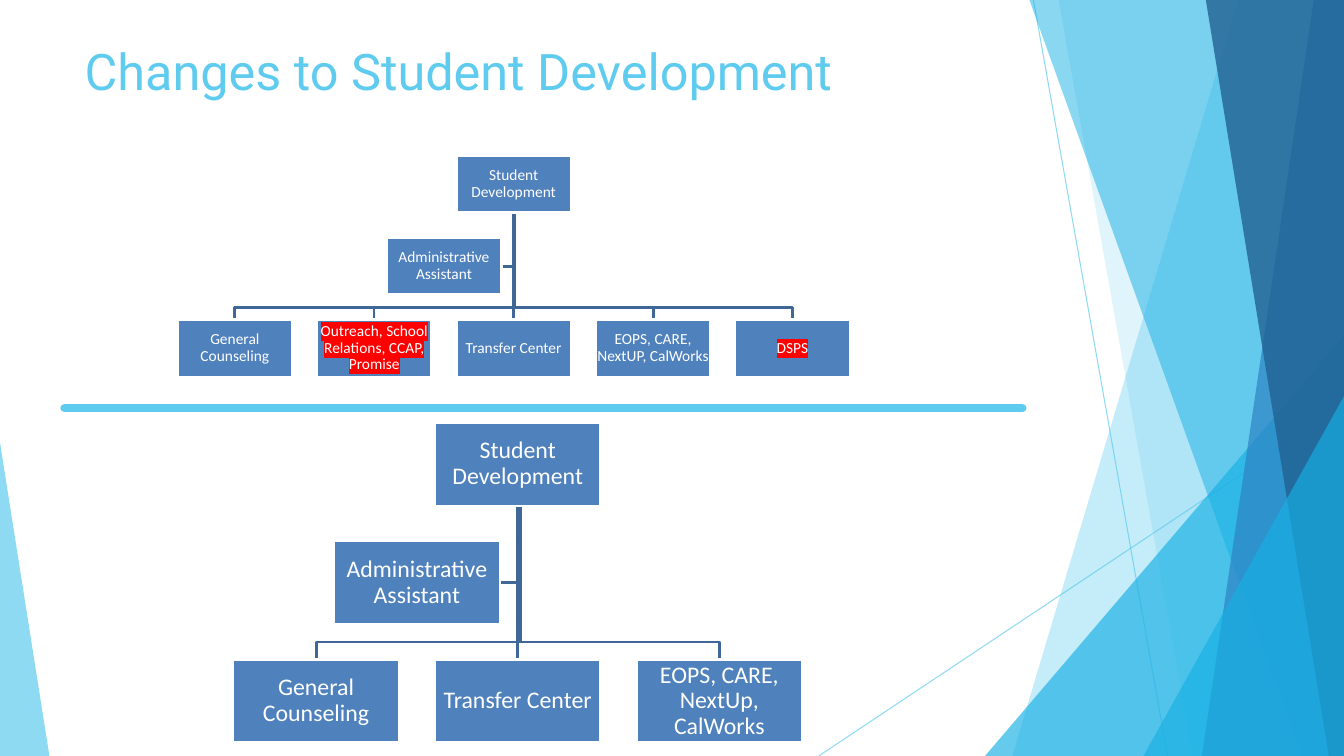
from lxml.etree import SubElement
from pptx import Presentation
from pptx.dml.color import RGBColor
from pptx.enum.shapes import MSO_CONNECTOR, MSO_SHAPE
from pptx.enum.text import MSO_ANCHOR, MSO_AUTO_SIZE, PP_ALIGN
from pptx.oxml.ns import qn
from pptx.util import Pt

PX = 9144
WIDTH, HEIGHT = 1333, 750
SKY, AZURE, BLUE, NAVY = "5FCBEF", "17B0E4", "2E83C3", "226292"
BOX_FILL, BRANCH, WHITE, RED = "4F81BD", "3F6797", "FFFFFF", "FF0000"


def px(*lengths):
    """Turn px lengths into EMU."""
    return [round(length * PX) for length in lengths]


def paint(color_format, color, opacity=100):
    """Set a hex colour and its opacity on a fill or line that is made solid."""
    color_format.solid()
    color_format.fore_color.rgb = RGBColor.from_string(color)
    if opacity < 100:
        tint = color_format._xPr.find(qn("a:solidFill"))[0]
        SubElement(tint, qn("a:alpha"), val=str(opacity * 1000))


def write(frame, text, *, size, font, color, align=PP_ALIGN.LEFT,
          anchor=MSO_ANCHOR.TOP, inset=None, spacing=None, highlight=None):
    """Put formatted text in a text frame."""
    frame.word_wrap = True
    frame.auto_size = MSO_AUTO_SIZE.NONE
    frame.vertical_anchor = anchor
    if inset is not None:
        (frame.margin_left, frame.margin_top,
         frame.margin_right, frame.margin_bottom) = px(*[inset] * 4)
    paragraph = frame.paragraphs[0]
    paragraph.alignment = align
    paragraph.line_spacing = spacing
    run = paragraph.add_run()
    run.text = text
    run.font.size = Pt(size)
    run.font.bold = False
    paint(run.font.fill, color)
    if highlight:
        mark = SubElement(run.font._element, qn("a:highlight"))
        SubElement(mark, qn("a:srgbClr"), val=highlight)
    run.font.name = font


def draw_line(shapes, start, end, color, weight, opacity=100, cap="flat"):
    """Draw a straight line between two points."""
    line = shapes.add_connector(MSO_CONNECTOR.STRAIGHT, *px(*start, *end))
    line.line.width = Pt(weight)
    paint(line.line.fill, color, opacity)
    properties = line.element.spPr
    properties.find(qn("a:ln")).set("cap", cap)
    SubElement(properties, qn("a:effectLst"))


def draw_outline(shapes, points, close):
    """Draw a freeform through the points."""
    builder = shapes.build_freeform(*points[0], scale=PX)
    builder.add_line_segments(points[1:], close=close)
    outline = builder.convert_to_shape()
    outline.shadow.inherit = False
    return outline


def draw_facet(shapes, top, bottom, color, opacity):
    """Fill the slide from a slanted edge to its right side."""
    corners = [(top, 0), (WIDTH, 0), (WIDTH, HEIGHT), (bottom, HEIGHT)]
    facet = draw_outline(shapes, corners, True)
    paint(facet.fill, color, opacity)
    facet.line.fill.background()


def draw_wedge(shapes, left, top, width, apex, color, opacity):
    """Stand a right triangle on the bottom edge of the slide."""
    wedge = shapes.add_shape(MSO_SHAPE.ISOSCELES_TRIANGLE,
                             *px(left, top, width, HEIGHT - top))
    wedge.adjustments[0] = apex
    wedge.shadow.inherit = False
    paint(wedge.fill, color, opacity)
    wedge.line.fill.background()


def draw_backdrop(shapes):
    """Draw the translucent facets at both sides of the slide."""
    draw_line(shapes, (1025, 0), (1158, HEIGHT), SKY, 0.75, 70)
    draw_line(shapes, (WIDTH, 403), (812, HEIGHT), SKY, 0.75, 70)
    draw_facet(shapes, 1228, 1004, SKY, 36)
    draw_facet(shapes, 1050, 1183, SKY, 20)
    draw_wedge(shapes, 977, 333, 356, 1, AZURE, 66)
    draw_facet(shapes, 1021, 1291, AZURE, 50)
    draw_facet(shapes, 1303, 1192, BLUE, 70)
    draw_facet(shapes, 1196, 1318, NAVY, 80)
    draw_wedge(shapes, 1134, 393, 199, 1, AZURE, 66)
    draw_wedge(shapes, 0, 439, 49, 0, SKY, 70)


def draw_unit(shapes, left, top, width, height, label, size, highlight=None):
    """Draw one labelled box of an organisation chart."""
    unit = shapes.add_shape(MSO_SHAPE.RECTANGLE, *px(left, top, width, height))
    unit.shadow.inherit = False
    paint(unit.fill, BOX_FILL)
    paint(unit.line.fill, WHITE)
    unit.line.width = Pt(2)
    write(unit.text_frame, label, size=size, font="Calibri", color=WHITE,
          align=PP_ALIGN.CENTER, anchor=MSO_ANCHOR.MIDDLE, inset=1,
          spacing=0.9, highlight=highlight)


def draw_branch(shapes, points):
    """Draw an angled branch of an organisation chart."""
    branch = draw_outline(shapes, points, False)
    branch.fill.background()
    paint(branch.line.fill, BRANCH)
    branch.line.width = Pt(2)


def draw_org_chart(shapes, box, unit_size, teams, size, stem_shift, changed=()):
    """Fill a box with a head, an assistant and a row of teams."""
    left, top, width, height = box
    unit_width, unit_height = unit_size
    column = (width - unit_width) / (len(teams) - 1)
    row = (height - unit_height) / 2
    trunk = left + width / 2
    head_left = trunk - unit_width / 2
    assistant_left = head_left - column / 2
    stem_top = top + unit_height + 1
    team_top = top + 2 * row
    bus = team_top - 0.21 * unit_height
    assistant_middle = top + row + unit_height / 2

    draw_branch(shapes, [(trunk, stem_top), (trunk, assistant_middle),
                         (assistant_left + unit_width, assistant_middle)])
    for index in range(len(teams)):
        center = left + unit_width / 2 + index * column
        if center == trunk:
            draw_line(shapes, (trunk, stem_top), (trunk, team_top), BRANCH, 2)
        else:
            stem = trunk if index else trunk + stem_shift
            draw_branch(shapes, [(stem, stem_top), (stem, bus),
                                 (center, bus), (center, team_top)])

    draw_unit(shapes, head_left, top, *unit_size, "Student Development", size)
    for index, team in enumerate(teams):
        draw_unit(shapes, left + index * column, team_top, *unit_size, team,
                  size, RED if team in changed else None)
    draw_unit(shapes, assistant_left, top + row, *unit_size,
              "Administrative Assistant", size)


def place_title(title, box):
    """Move the title placeholder to a box and fill it."""
    title.left, title.top, title.width, title.height = px(*box)
    write(title.text_frame, "Changes to Student Development", size=36,
          font="Roboto", color=SKY)


def main():
    """Build the slide and save it."""
    deck = Presentation()
    deck.slide_width, deck.slide_height = px(WIDTH, HEIGHT)
    slide = deck.slides.add_slide(deck.slide_layouts[5])
    shapes = slide.shapes
    draw_backdrop(shapes)
    place_title(shapes.title, (74, 35, 940, 87))
    outreach = "Outreach, School Relations, CCAP, Promise"
    draw_org_chart(shapes, (176, 154, 667, 220), (114, 57),
                   ["General Counseling", outreach, "Transfer Center",
                    "EOPS, CARE, NextUP, CalWorks", "DSPS"],
                   11, 1, changed=(outreach, "DSPS"))
    draw_org_chart(shapes, (231, 419, 565, 318), (165, 83),
                   ["General Counseling", "Transfer Center",
                    "EOPS, CARE, NextUp, CalWorks"], 17, 2)
    draw_line(shapes, (64, 405), (1014, 405), SKY, 6, cap="rnd")
    deck.save("out.pptx")


if __name__ == "__main__":
    main()
